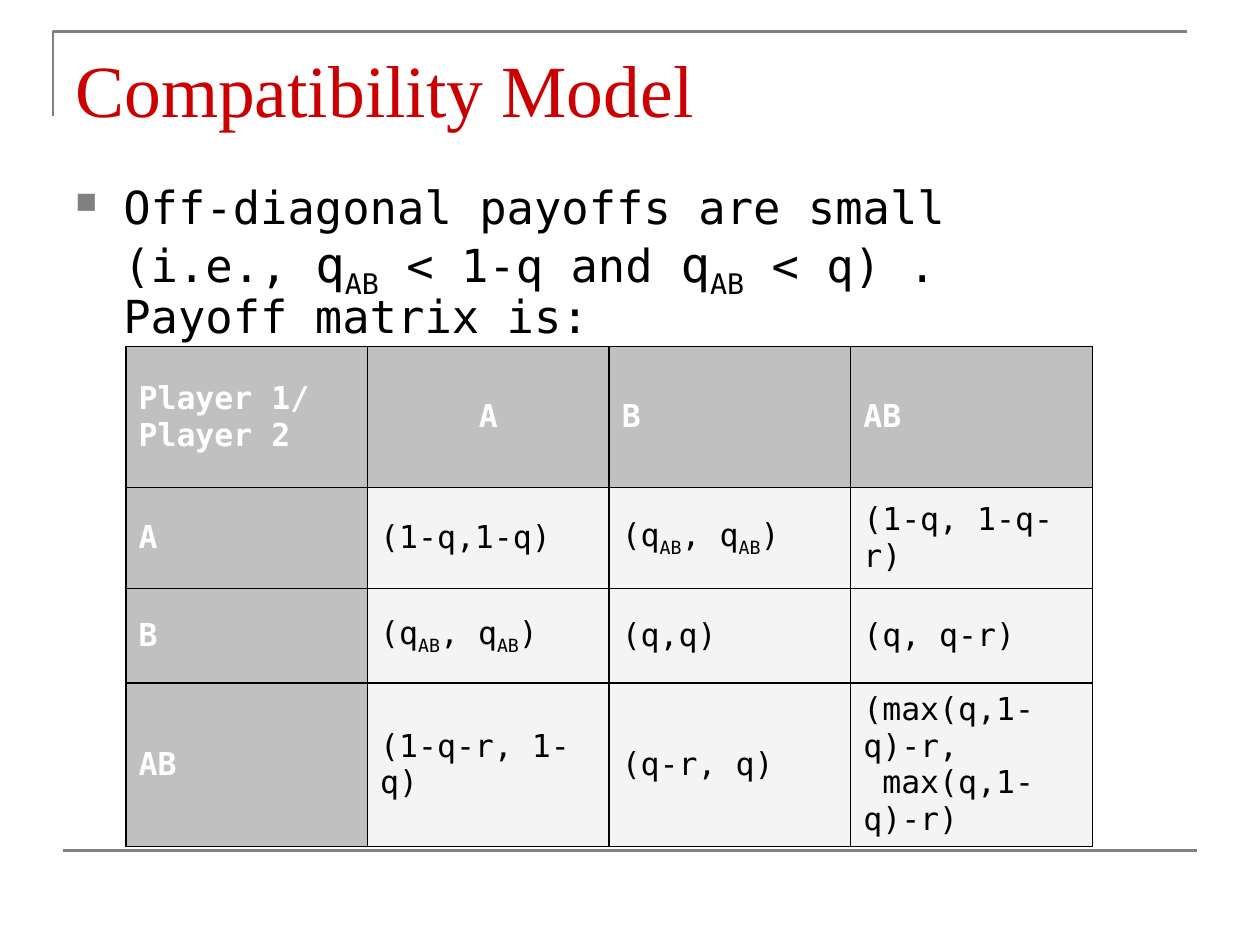
from pptx import Presentation
from pptx.dml.color import RGBColor
from pptx.enum.shapes import MSO_CONNECTOR
from pptx.enum.text import MSO_ANCHOR, PP_ALIGN
from pptx.oxml.ns import qn
from pptx.util import Inches, Pt
from lxml.etree import SubElement

BODY_FONT = "DejaVu Sans Mono"
RULE_GRAY = "808080"
SUBSCRIPT = "AB"

HEADERS = ["Player 1/ Player 2", "A", "B", "AB"]
PAYOFFS = [
    ["A", "(1-q,1-q)", "(qAB, qAB)", "(1-q, 1-q-r)"],
    ["B", "(qAB, qAB)", "(q,q)", "(q, q-r)"],
    ["AB", "(1-q-r, 1-q)", "(q-r, q)", "(max(q,1-q)-r,\n max(q,1-q)-r)"],
]
ROW_HEIGHTS = [1.12, 0.8, 0.75, 0.75]


def color(value):
    return RGBColor.from_string(value)


def add_text(paragraph, text, size=18, fill="000000", font=BODY_FONT, bold=False, baseline=0):
    run = paragraph.add_run()
    run.text = text
    run.font.size = Pt(size)
    run.font.name = font
    run.font.bold = bold
    run.font.color.rgb = color(fill)
    if baseline:
        run.font._element.set("baseline", str(baseline * 1000))


def add_formula(paragraph, text, size=18):
    for index, part in enumerate(text.split(SUBSCRIPT)):
        if index:
            add_text(paragraph, SUBSCRIPT, size=size, baseline=-25)
        if part:
            add_text(paragraph, part, size=size)


def add_text_frame(slide, left, top, width, height):
    shape = slide.shapes.add_textbox(Inches(left), Inches(top), Inches(width), Inches(height))
    shape.text_frame.word_wrap = True
    return shape.text_frame


def style_line(shape):
    shape.line.color.rgb = color(RULE_GRAY)
    shape.line.width = Pt(1.5)


def add_corner_rule(slide):
    builder = slide.shapes.build_freeform(Inches(0.42), Inches(0.92))
    corner = [(Inches(0.42), Inches(0.25)), (Inches(9.42), Inches(0.25))]
    builder.add_line_segments(corner, close=False)
    shape = builder.convert_to_shape()
    shape.shadow.inherit = False
    shape.fill.background()
    style_line(shape)


def add_bottom_rule(slide):
    connector = slide.shapes.add_connector(
        MSO_CONNECTOR.STRAIGHT, Inches(0.5), Inches(6.75), Inches(9.5), Inches(6.75)
    )
    style_line(connector)
    SubElement(connector._element.spPr, qn("a:effectLst"))


def add_bullet(paragraph):
    properties = paragraph._p.get_or_add_pPr()
    properties.set("marL", str(Inches(0.38)))
    properties.set("indent", str(-Inches(0.38)))
    bullet_color = SubElement(properties, qn("a:buClr"))
    SubElement(bullet_color, qn("a:srgbClr"), val=RULE_GRAY)
    SubElement(properties, qn("a:buSzPct"), val="65000")
    SubElement(properties, qn("a:buChar"), char="■")


def add_body(slide):
    paragraph = add_text_frame(slide, 0.5, 1.42, 8.42, 4.5).paragraphs[0]
    paragraph.line_spacing = 0.9
    paragraph.space_before = Pt(5)
    add_bullet(paragraph)
    add_text(paragraph, "Off-diagonal payoffs are small (i.e., ", size=26)
    for following in [" < 1-q and ", " < q) .  Payoff matrix is:"]:
        add_formula(paragraph, "qAB", size=28)
        add_text(paragraph, following, size=26)


def style_cell(cell, fill):
    properties = cell._tc.get_or_add_tcPr()
    for side in ["a:lnL", "a:lnR", "a:lnT", "a:lnB"]:
        border = SubElement(properties, qn(side), w=str(Pt(1)))
        solid = SubElement(border, qn("a:solidFill"))
        SubElement(solid, qn("a:srgbClr"), val="000000")
    cell.fill.solid()
    cell.fill.fore_color.rgb = color(fill)
    cell.vertical_anchor = MSO_ANCHOR.MIDDLE


def fill_heading_cell(cell, text):
    style_cell(cell, "C0C0C0")
    add_text(cell.text_frame.paragraphs[0], text, fill="FFFFFF", bold=True)


def fill_payoff_cell(cell, text):
    style_cell(cell, "F4F4F4")
    frame = cell.text_frame
    for index, line in enumerate(text.split("\n")):
        paragraph = frame.add_paragraph() if index else frame.paragraphs[0]
        add_formula(paragraph, line)


def add_payoff_table(slide):
    rows = [HEADERS] + PAYOFFS
    table = slide.shapes.add_table(
        len(rows), len(HEADERS), Inches(1), Inches(2.75), Inches(7.67), Inches(sum(ROW_HEIGHTS))
    ).table
    for row, height in zip(table.rows, ROW_HEIGHTS):
        row.height = Inches(height)
    for row_index, row in enumerate(rows):
        for column_index, text in enumerate(row):
            is_heading = row_index == 0 or column_index == 0
            fill_cell = fill_heading_cell if is_heading else fill_payoff_cell
            fill_cell(table.cell(row_index, column_index), text)
    table.cell(0, 1).text_frame.paragraphs[0].alignment = PP_ALIGN.CENTER


def main():
    presentation = Presentation()
    presentation.slide_width = Inches(10)
    presentation.slide_height = Inches(7.5)
    slide = presentation.slides.add_slide(presentation.slide_layouts[6])
    add_corner_rule(slide)
    add_bottom_rule(slide)
    title = add_text_frame(slide, 0.5, 0.3, 9, 1.25).paragraphs[0]
    add_text(title, "Compatibility Model", size=42, fill="CC0000", font="Times New Roman")
    add_body(slide)
    add_payoff_table(slide)
    presentation.save("out.pptx")


if __name__ == "__main__":
    main()
